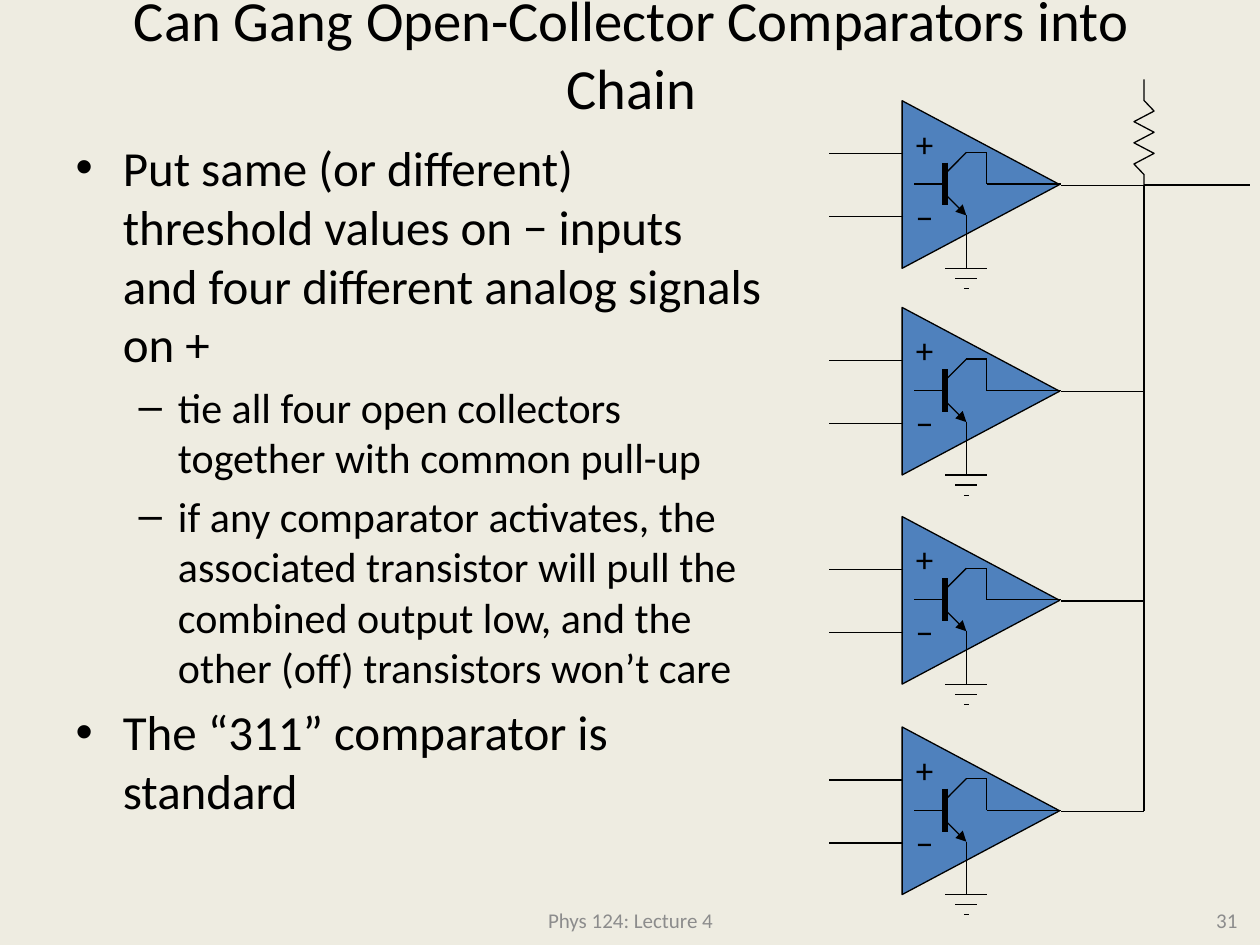
from pptx import Presentation, util as u
from pptx.dml.color import RGBColor
from pptx.enum import shapes as sh, text as tx
from pptx.oxml.ns import qn
from lxml import etree

BLACK = RGBColor(0, 0, 0)
GREY = RGBColor(0x8C, 0x8C, 0x8C)
BLUE = RGBColor(0x4F, 0x81, 0xBD)
CREAM = RGBColor(0xEE, 0xEC, 0xE1)
FONT = "Calibri"

# Content
TITLE = "Can Gang Open-Collector Comparators into Chain"
BODY = [
    (0, "Put same (or different) threshold values on − inputs and four different analog signals on +"),
    (1, "tie all four open collectors together with common pull-up"),
    (1, "if any comparator activates, the associated transistor will pull the "
        "combined output low, and the other (off) transistors won’t care"),
    (0, "The “311” comparator is standard"),
]
SIZES = (28, 24)
FOOT = [
    ("Phys 124: Lecture 4", (3.42, 7.1, 3.17, 0.4), tx.PP_ALIGN.CENTER),
    ("31", (7.59, 7.1, 2.33, 0.4), tx.PP_ALIGN.RIGHT),
]

# Circuit: heights in a comparator are offsets from its output line
OUTS = (1.46, 3.1, 4.76, 6.43)
RAIL, END = 9.08, 9.92
SIGNS = [("+", -0.54), ("−", 0.04)]
WIRES = [
    (7.17, 0.26, 6.58, 0.26),      # inputs
    (7.17, -0.24, 6.58, -0.24),
    (8.42, 0.01, RAIL, 0.01),      # output
    (7.5, -0.08, 7.67, -0.25),     # collector
    (7.67, -0.25, 7.83, -0.25),
    (7.83, -0.25, 7.83, 0),
    (7.83, 0, 8.42, 0),
    (7.5, 0, 7.25, 0),             # base
    (7.67, 0.25, 7.67, 0.67),      # emitter to ground
    (7.5, 0.67, 7.83, 0.67),
    (7.58, 0.75, 7.75, 0.75),
    (7.65, 0.83, 7.69, 0.83),
]
BAR = (7.5, -0.17, 7.5, 0.17)
ARROW = (7.5, 0.08, 7.67, 0.25)


def style(run, size, color=BLACK):
    run.font.name, run.font.size, run.font.color.rgb = FONT, u.Pt(size), color


def place(shape, box):
    shape.left, shape.top, shape.width, shape.height = map(u.Inches, box)


def outline(shape, width=0.75):
    shape.line.color.rgb, shape.line.width = BLACK, u.Pt(width)


def label(parent, words, box, size, color=BLACK, align=tx.PP_ALIGN.LEFT, wrap=True):
    frame = parent.add_textbox(*map(u.Inches, box)).text_frame
    frame.text, frame.word_wrap = words, wrap
    frame.vertical_anchor = tx.MSO_ANCHOR.MIDDLE
    frame.paragraphs[0].alignment = align
    style(frame.paragraphs[0].runs[0], size, color)


def wire(parent, ends, dy=0, width=0.75, arrow=False):
    x1, y1, x2, y2 = ends
    line = parent.add_connector(sh.MSO_CONNECTOR.STRAIGHT,
                                *map(u.Inches, (x1, y1 + dy, x2, y2 + dy)))
    outline(line, width)
    props = line._element.spPr
    if arrow:
        etree.SubElement(props.find(qn("a:ln")), qn("a:tailEnd"), type="triangle")
    etree.SubElement(props, qn("a:effectLst"))


def comparator(parent, y):
    parts = parent.add_group_shape().shapes
    amp = parts.add_shape(sh.MSO_SHAPE.ISOSCELES_TRIANGLE,
                          *map(u.Inches, (7.12, y - 0.62, 1.33, 1.25)))
    amp.rotation = 90
    amp.shadow.inherit = False
    amp.fill.solid()
    amp.fill.fore_color.rgb = BLUE
    outline(amp)
    for sign, dy in SIGNS:
        label(parts, sign, (7.17, y + dy, 0.36, 0.43), 20, wrap=False)
    for ends in WIRES:
        wire(parts, ends, y)
    wire(parts, BAR, y, width=3)
    wire(parts, ARROW, y, arrow=True)


def resistor(parent, top, high):
    # Ten equal steps: a two-step lead, six bends, a one-step lead
    sides = (0, 1, -1, 1, -1, 1, -1, 0, 0)
    points = [(u.Inches(RAIL + 0.08 * side), u.Inches(top + high * k / 10))
              for k, side in enumerate(sides, 2)]
    pen = parent.build_freeform(u.Inches(RAIL), u.Inches(top))
    pen.add_line_segments(points, close=False)
    shape = pen.convert_to_shape()
    shape.shadow.inherit = False
    shape.fill.background()
    outline(shape)


def main():
    deck = Presentation()
    deck.slide_width, deck.slide_height = u.Inches(10), u.Inches(7.5)
    slide = deck.slides.add_slide(deck.slide_layouts[1])
    slide.background.fill.solid()
    slide.background.fill.fore_color.rgb = CREAM

    # Title
    title = slide.shapes.title
    place(title, (0.4, 0.02, 9.22, 0.8))
    title.text_frame.text = TITLE
    title.text_frame.auto_size = tx.MSO_AUTO_SIZE.NONE
    style(title.text_frame.paragraphs[0].runs[0], 32.4)

    # Bullets
    body = slide.placeholders[1]
    place(body, (0.5, 1.04, 5.64, 6.05))
    frame = body.text_frame
    frame.text = "\n".join(words for _, words in BODY)
    frame.auto_size = tx.MSO_AUTO_SIZE.NONE
    for para, (level, _) in zip(frame.paragraphs, BODY):
        para.level = level
        style(para.runs[0], SIZES[level])

    # Footer
    for words, box, align in FOOT:
        label(slide.shapes, words, box, 12, GREY, align)

    # Comparators, pull-up and shared output
    for y in OUTS:
        comparator(slide.shapes, y)
    first, last = OUTS[0] + 0.01, OUTS[-1] + 0.01
    resistor(slide.shapes, 0.63, first - 0.63)
    wire(slide.shapes, (RAIL, last, RAIL, first), width=1)
    wire(slide.shapes, (RAIL, first, END, first), width=1)

    deck.save("out.pptx")


if __name__ == "__main__":
    main()
